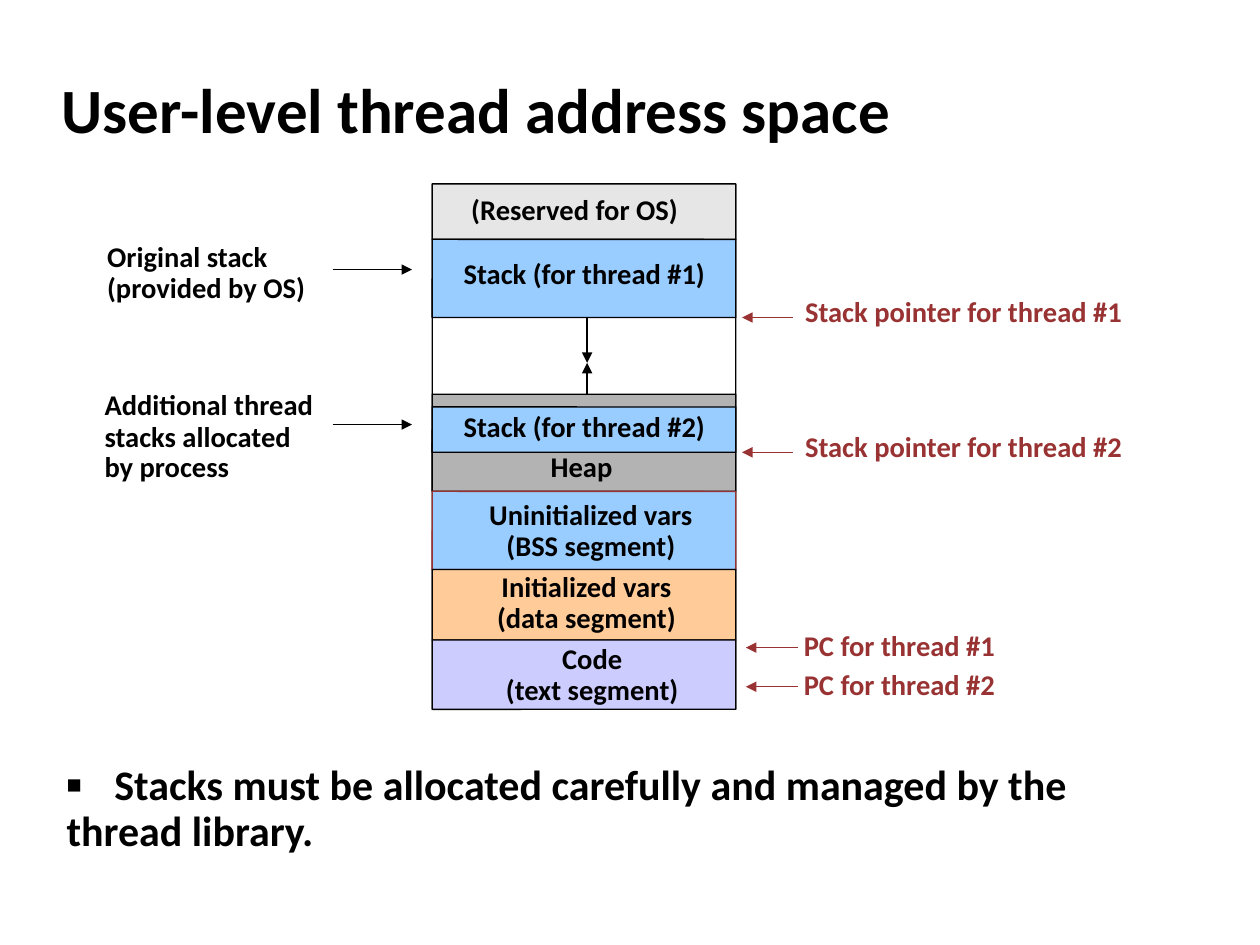
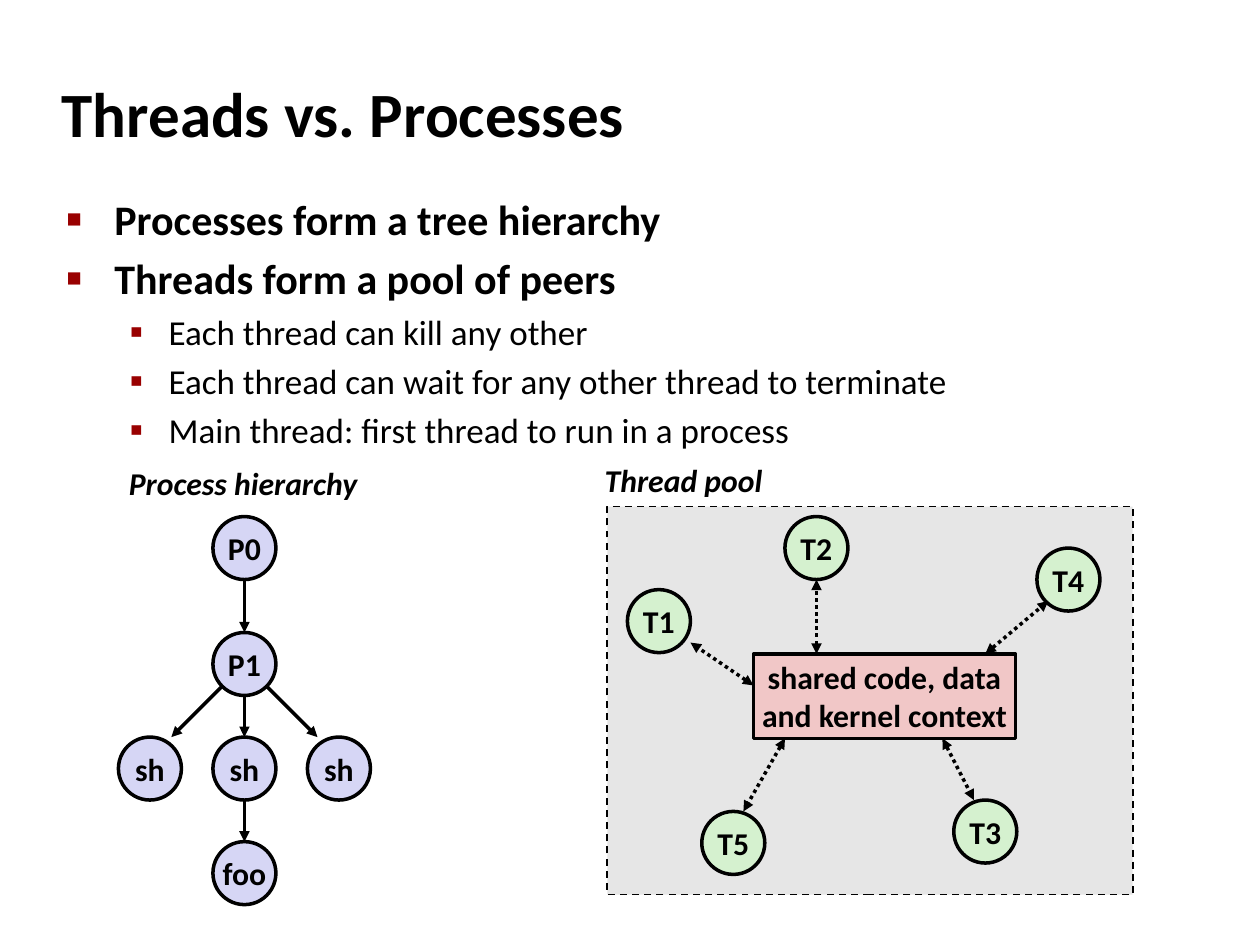
from lxml.etree import SubElement
from pptx import Presentation
from pptx.dml.color import RGBColor
from pptx.enum.dml import MSO_LINE
from pptx.enum.shapes import MSO_CONNECTOR, MSO_SHAPE
from pptx.enum.text import MSO_ANCHOR, MSO_AUTO_SIZE, PP_ALIGN
from pptx.oxml.ns import qn
from pptx.util import Inches, Pt

FONT = "Calibri"
COLORS = {
    "black": "000000", "white": "FFFFFF", "pointer": "993333", "bullet": "990000",
    "reserved": "E6E6E6", "stack": "99CCFF", "heap": "B3B3B3", "data": "FFCC99",
    "code": "CCCCFF", "pool": "E6E6E6", "process": "D6D6F5", "thread": "D5F1CF",
    "shared": "F1C7C7",
}
LEFT, CENTER = PP_ALIGN.LEFT, PP_ALIGN.CENTER
TITLE_BOX = (0.39, 0.48, 8.3, 0.83)
BODY_LEFT, BODY_WIDTH, BODY_BOTTOM = 0.43, 8.64, 6.93
BULLETS = {
    0: dict(size=24, bold=True, margin=0.38, hang=0.38, mark="■", mark_size=60),
    1: dict(size=20, bold=False, margin=0.81, hang=0.31, mark="▪", mark_size=110),
}

SPACE_TITLE = "User-level thread address space"
SPACE_NOTE = ["Stacks must be allocated carefully and managed by the", "thread library."]
MAP_LEFT, MAP_TOP, MAP_WIDTH = 3.43, 1.46, 2.41
SEGMENTS = [
    (0.44, "reserved", "black"),
    (0.62, "stack", "black"),
    (0.61, None, None),
    (0.77, "heap", "black"),
    (0.62, "stack", "pointer"),
    (0.56, "data", "black"),
    (0.55, "code", "black"),
]
SECOND_STACK = (3.23, 0.36)
MAP_LABELS = [
    (["(Reserved for OS)"], (3.74, 1.55, 1.9, 0.26), LEFT, "black"),
    (["Stack (for thread #1)"], (3.68, 2.06, 2.07, 0.26), LEFT, "black"),
    (["Stack (for thread #2)"], (3.68, 3.27, 2.07, 0.26), LEFT, "black"),
    (["Heap"], (4.37, 3.59, 0.58, 0.26), LEFT, "black"),
    (["Uninitialized vars", "(BSS segment)"], (3.73, 3.97, 1.92, 0.53), CENTER, "black"),
    (["Initialized vars", "(data segment)"], (3.84, 4.54, 1.63, 0.53), CENTER, "black"),
    (["Code", "(text segment)"], (3.91, 5.11, 1.58, 0.53), CENTER, "black"),
    (["Original stack", "(provided by OS)"], (0.85, 1.92, 1.31, 0.51), LEFT, "black"),
    (["Additional thread", "stacks allocated", "by process"],
     (0.83, 3.1, 1.33, 0.77), LEFT, "black"),
    (["Stack pointer for thread #1"], (6.39, 2.36, 2.67, 0.26), LEFT, "pointer"),
    (["Stack pointer for thread #2"], (6.39, 3.43, 2.67, 0.26), LEFT, "pointer"),
    (["PC for thread #1"], (6.38, 5.01, 1.84, 0.31), LEFT, "pointer"),
    (["PC for thread #2"], (6.38, 5.32, 1.84, 0.31), LEFT, "pointer"),
]
GROWTH_X, GROWTH_MEET = 4.66, 2.88
MAP_ARROWS = [
    ((GROWTH_X, 2.52), (GROWTH_X, GROWTH_MEET), "black"),
    ((GROWTH_X, 3.13), (GROWTH_X, GROWTH_MEET), "black"),
    *[((2.64, y), (3.27, y), "black") for y in (2.14, 3.37)],
    *[((6.29, y), (5.89, y), "pointer") for y in (2.52, 3.59)],
    *[((6.33, y), (5.92, y), "pointer") for y in (5.14, 5.45)],
]

VERSUS_TITLE = "Threads vs. Processes"
VERSUS_POINTS = [
    (0, "Processes form a tree hierarchy"),
    (0, "Threads form a pool of peers"),
    (1, "Each thread can kill any other"),
    (1, "Each thread can wait for any other thread to terminate"),
    (1, "Main thread: first thread to run in a process"),
]
CAPTIONS = [
    ("Process hierarchy", (0.91, 3.63, 2.04, 0.41)),
    ("Thread pool", (4.69, 3.6, 1.47, 0.41)),
]
NODE = 0.5
DIAGONAL = 0.17
TREE_LEFT, TREE_STEP = 0.94, 0.75
TREE_ROWS = [4.1, 5.02, 5.85, 6.68]
PROCESSES = [("P0", 1, 0), ("P1", 1, 1), ("sh", 0, 2), ("sh", 1, 2), ("sh", 2, 2), ("foo", 1, 3)]
PARENTS = [(0, 1), (1, 2), (1, 3), (1, 4), (3, 5)]
POOL_BOX = (4.82, 4.02, 4.17, 3.08)
SHARED_BOX = (5.98, 5.19, 2.08, 0.67)
SHARED_TEXT = ["shared code, data", "and kernel context"]
THREADS = [
    ("T1", (4.98, 4.68), (5.98, 5.44), (5.48, 5.1)),
    ("T2", (6.23, 4.1), (6.48, 5.19), (6.48, 4.6)),
    ("T3", (7.57, 6.35), (7.48, 5.86), (7.73, 6.35)),
    ("T4", (8.23, 4.35), (7.82, 5.19), (8.32, 4.77)),
    ("T5", (5.57, 6.44), (6.23, 5.86), (5.9, 6.44)),
]


def inches(values):
    return [Inches(value) for value in values]


def rgb(name):
    return RGBColor.from_string(COLORS[name])


def write(frame, lines, size=18.1, color="black", bold=True, italic=False, align=CENTER,
          anchor=MSO_ANCHOR.MIDDLE, inset=(0.1, 0.05), wrap=False, tight=False):
    frame.auto_size = MSO_AUTO_SIZE.NONE
    frame.word_wrap = wrap
    frame.vertical_anchor = anchor
    frame.margin_left = frame.margin_right = Inches(inset[0])
    frame.margin_top = frame.margin_bottom = Inches(inset[1])
    for index, line in enumerate(lines):
        para = frame.paragraphs[0] if index == 0 else frame.add_paragraph()
        para.alignment = align
        if tight:
            para.line_spacing = 0.9 if index else 0.93
        span = para.add_run()
        span.text = line
        span.font.name, span.font.size = FONT, Pt(size)
        span.font.bold, span.font.italic = bold, italic
        span.font.color.rgb = rgb(color)


def add_text(page, lines, place, **style):
    box = page.shapes.add_textbox(*inches(place))
    write(box.text_frame, lines, **style)
    return box.text_frame


def add_box(page, kind, place, fill=None, line="black", width=2.0, dash=None):
    box = page.shapes.add_shape(kind, *inches(place))
    box.shadow.inherit = False
    if fill:
        box.fill.solid()
        box.fill.fore_color.rgb = rgb(fill)
    else:
        box.fill.background()
    box.line.color.rgb = rgb(line)
    box.line.width = Pt(width)
    if dash:
        box.line.dash_style = dash
    return box


def add_arrow(page, start, end, color="black", width=2.0, dash=None, both=False):
    arrow = page.shapes.add_connector(MSO_CONNECTOR.STRAIGHT, *inches(start + end))
    arrow.line.color.rgb = rgb(color)
    arrow.line.width = Pt(width)
    if dash:
        arrow.line.dash_style = dash
    outline = arrow.line._get_or_add_ln()
    for tag in ("a:headEnd", "a:tailEnd") if both else ("a:tailEnd",):
        SubElement(outline, qn(tag), type="triangle")
    SubElement(arrow._element.spPr, qn("a:effectLst"))


def add_bullet(para, level, color):
    look = BULLETS[level]
    para.level = level
    props = para._p.get_or_add_pPr()
    props.set("marL", str(Inches(look["margin"])))
    props.set("indent", str(-Inches(look["hang"])))
    SubElement(SubElement(props, qn("a:buClr")), qn("a:srgbClr"), val=COLORS[color])
    SubElement(props, qn("a:buSzPct"), val=str(look["mark_size"] * 1000))
    SubElement(props, qn("a:buFont"), typeface="Arial")
    SubElement(props, qn("a:buChar"), char=look["mark"])


def add_body(page, lines, top, **style):
    place = (BODY_LEFT, top, BODY_WIDTH, BODY_BOTTOM - top)
    return add_text(page, lines, place, size=BULLETS[0]["size"], align=LEFT,
                    anchor=MSO_ANCHOR.TOP, wrap=True, **style)


def new_page(deck, title, tight=False):
    page = deck.slides.add_slide(deck.slide_layouts[5])
    page.background.fill.solid()
    page.background.fill.fore_color.rgb = rgb("white")
    holder = page.shapes.title
    holder.left, holder.top, holder.width, holder.height = inches(TITLE_BOX)
    write(holder.text_frame, [title], size=36, align=LEFT, wrap=True, tight=tight)
    return page


def add_segment(page, top, height, fill=None, line="black"):
    place = (MAP_LEFT, top, MAP_WIDTH, height)
    box = add_box(page, MSO_SHAPE.ROUNDED_RECTANGLE, place, fill, line, 0.75)
    box.adjustments[0] = 0.003


def build_address_space(deck):
    page = new_page(deck, SPACE_TITLE, tight=True)
    note = add_body(page, SPACE_NOTE, 6.01, tight=True)
    add_bullet(note.paragraphs[0], 0, "black")
    add_segment(page, MAP_TOP, sum(height for height, *_ in SEGMENTS))
    top = MAP_TOP
    for height, fill, line in SEGMENTS:
        if fill:
            add_segment(page, top, height, fill, line)
        top += height
    add_segment(page, *SECOND_STACK, "stack")
    for start, end, color in MAP_ARROWS:
        add_arrow(page, start, end, color, 0.75)
    for lines, place, align, color in MAP_LABELS:
        add_text(page, lines, place, size=16.3, color=color, align=align,
                 anchor=MSO_ANCHOR.TOP, inset=(0, 0), tight=True)


def add_node(page, text, left, top, fill):
    node = add_box(page, MSO_SHAPE.OVAL, (left, top, NODE, NODE), fill)
    write(node.text_frame, [text])


def build_process_tree(page):
    corners = [(TREE_LEFT + column * TREE_STEP, TREE_ROWS[row]) for _, column, row in PROCESSES]
    for (name, *_), corner in zip(PROCESSES, corners):
        add_node(page, name, *corner, "process")
    for parent, child in PARENTS:
        (x1, y1), (x2, y2) = corners[parent], corners[child]
        side = (x2 > x1) - (x2 < x1)
        drop = NODE / 2 + DIAGONAL if side else NODE
        start = (x1 + NODE / 2 + side * DIAGONAL, y1 + drop)
        add_arrow(page, start, (x2 + NODE / 2 - side * DIAGONAL, y2))


def build_thread_pool(page):
    for name, corner, *_ in THREADS:
        add_node(page, name, *corner, "thread")
    shared = add_box(page, MSO_SHAPE.RECTANGLE, SHARED_BOX, "shared")
    write(shared.text_frame, SHARED_TEXT)
    for _, _, start, end in THREADS:
        add_arrow(page, start, end, dash=MSO_LINE.ROUND_DOT, both=True)


def build_comparison(deck):
    page = new_page(deck, VERSUS_TITLE)
    add_box(page, MSO_SHAPE.RECTANGLE, POOL_BOX, "pool", width=1, dash=MSO_LINE.DASH)
    body = add_body(page, [text for _, text in VERSUS_POINTS], 1.49)
    for para, (level, _) in zip(body.paragraphs, VERSUS_POINTS):
        look = BULLETS[level]
        add_bullet(para, level, "bullet")
        para.space_before = Pt(look["size"] * 0.2)
        para.runs[0].font.size, para.runs[0].font.bold = Pt(look["size"]), look["bold"]
    for text, place in CAPTIONS:
        add_text(page, [text], place, italic=True)
    build_process_tree(page)
    build_thread_pool(page)


def main():
    deck = Presentation()
    deck.slide_width, deck.slide_height = Inches(10), Inches(7.5)
    build_address_space(deck)
    build_comparison(deck)
    deck.save("out.pptx")


if __name__ == "__main__":
    main()
